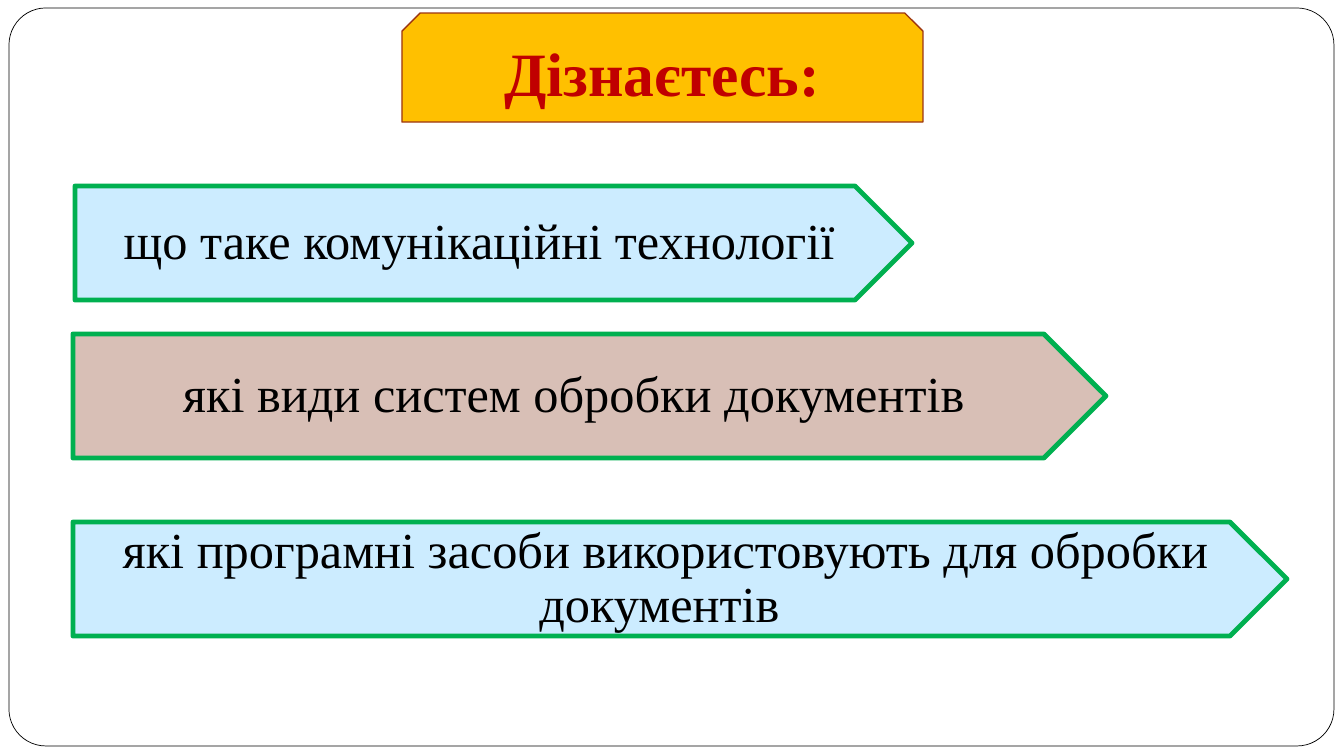
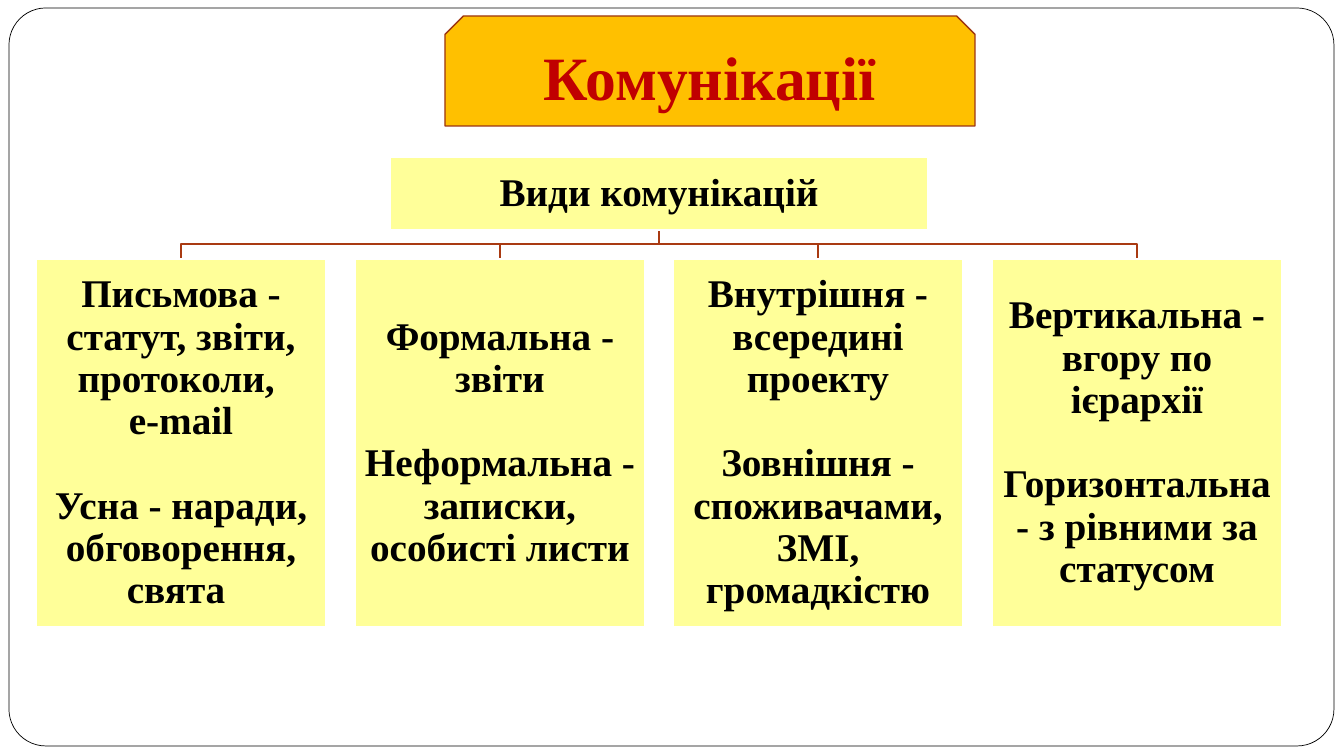
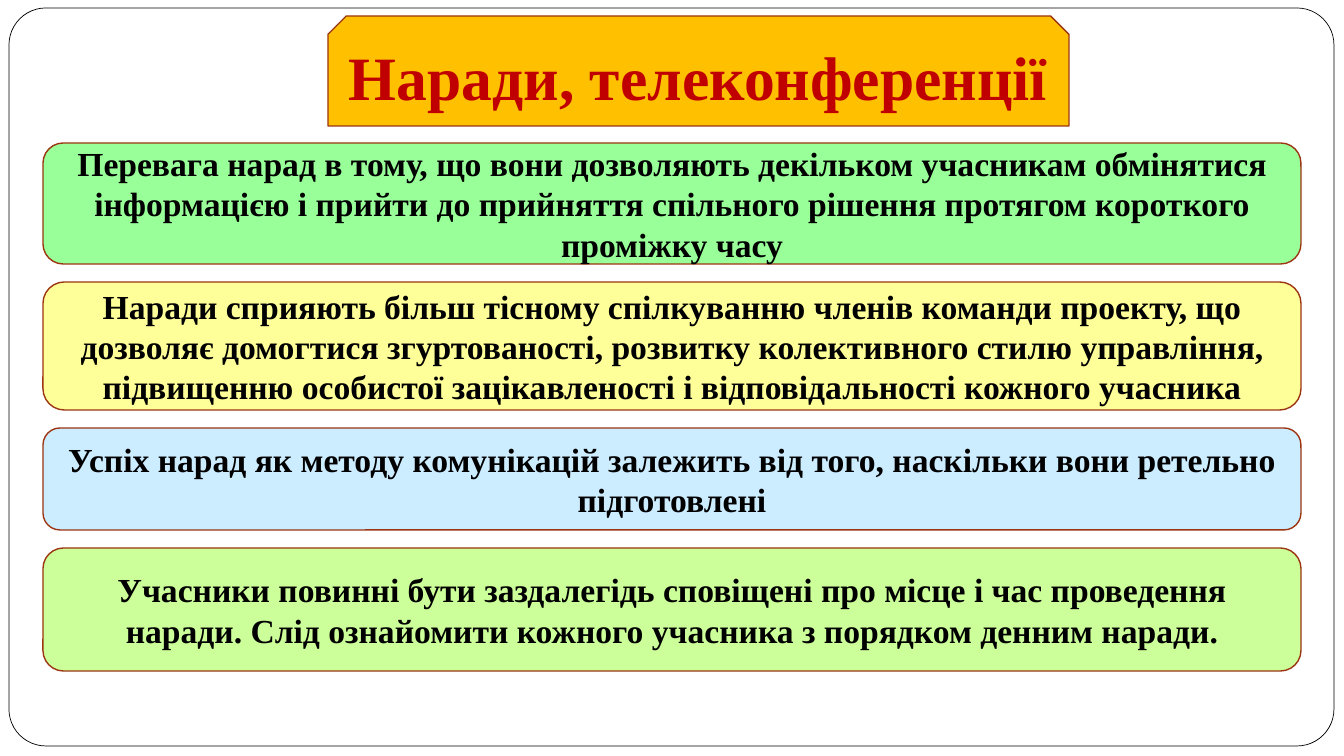
import pptx
import pptx.dml.color
import pptx.enum.shapes
import pptx.enum.text
import pptx.util

SHAPE = pptx.enum.shapes.MSO_SHAPE
PX = 12192000 / 1344
FONT = "Times New Roman"
BLACK, WHITE, RUST, TREE_LINE = "000000", "FFFFFF", "9C3511", "A93A12"
GOLD, RED, GREEN = "FFC000", "C00000", "00B050"
SKY, CLAY, YELLOW, MINT, LIME = "CCECFF", "D8BFB6", "FFFF99", "99FF99", "CCFF99"


def color(hex_value):
    return pptx.dml.color.RGBColor.from_string(hex_value)


def add_box(slide, kind, box, fill, line, line_width, text=(), size=24,
            bold=True, ink=BLACK, spacing=1.0, gap_before=None, inset=None):
    """Add a filled shape with centred text; gap_before is the paragraph that gets one line of space."""
    shape = slide.shapes.add_shape(kind, *[round(length * PX) for length in box])
    shape.shadow.inherit = False
    shape.fill.solid()
    shape.fill.fore_color.rgb = color(fill)
    shape.line.color.rgb = color(line)
    shape.line.width = pptx.util.Pt(line_width)
    frame = shape.text_frame
    frame.word_wrap = True
    frame.vertical_anchor = pptx.enum.text.MSO_ANCHOR.MIDDLE
    if inset is not None:
        frame.margin_left = frame.margin_right = round(inset * PX)
        frame.margin_top = frame.margin_bottom = round(inset * PX)
    for index, words in enumerate(text):
        paragraph = frame.paragraphs[0] if index == 0 else frame.add_paragraph()
        paragraph.text = words
        paragraph.alignment = pptx.enum.text.PP_ALIGN.CENTER
        paragraph.line_spacing = spacing
        if index == gap_before:
            paragraph.space_before = pptx.util.Pt(30)
        paragraph.font.name = FONT
        paragraph.font.size = pptx.util.Pt(size)
        paragraph.font.bold = bold
        paragraph.font.color.rgb = color(ink)
    return shape


deck = pptx.Presentation()
deck.slide_width = round(1344 * PX)
deck.slide_height = round(756 * PX)
blank = deck.slide_layouts[6]
for placeholder in list(blank.placeholders):
    blank.shapes.element.remove(placeholder.element)

# Slides and their title plates
titles = [
    ("Дізнаєтесь:", (402, 13, 521, 109)),
    ("Комунікації", (445, 16, 530, 110)),
    ("Наради, телеконференції", (328, 16, 741, 110)),
]
slides = []
for title, plate in titles:
    slide = deck.slides.add_slide(blank)
    add_box(slide, SHAPE.SNIP_2_SAME_RECTANGLE, plate, GOLD, RUST, 1,
            [title], size=44, ink=RED)
    slides.append(slide)
goals, kinds, meetings = slides

# The rounded page frame belongs to the layout
page_frame = add_box(goals, SHAPE.ROUNDED_RECTANGLE, (9, 8, 1325, 738), WHITE, BLACK, 0.5)
page_frame.adjustments[0] = 0.05
blank.shapes.element.append(page_frame.element)

# Slide 1: learning goals
for goal, box, fill in [
    ("що таке комунікаційні технології", (75, 186, 837, 114), SKY),
    ("які види систем обробки документів", (73, 334, 1033, 124), CLAY),
    ("які програмні засоби використовують для обробки документів ",
     (73, 522, 1214, 114), SKY),
]:
    add_box(goals, SHAPE.PENTAGON, box, fill, GREEN, 3.5, [goal],
            size=36, bold=False, spacing=0.9)

# Slide 2: tree of communication kinds, the elbow lines behind the boxes
tree_style = dict(fill=YELLOW, line=WHITE, line_width=1, size=28, spacing=0.9, inset=2)
branch_texts = [
    ["Письмова - статут, звіти, протоколи, ", "e-mail",
     "Усна - наради, обговорення, свята "],
    ["Формальна - звіти", "Неформальна - записки, особисті листи"],
    ["Внутрішня - всередині проекту", "Зовнішня - споживачами, ЗМІ, громадкістю"],
    ["Вертикальна - вгору по ієрархії", "Горизонтальна - з рівними за статусом"],
]
root_left, root_top, root_width, root_height = root_box = (390, 157, 538, 73)
root_x, root_bottom = root_left + root_width // 2, root_top + root_height
branch_top, branch_width = 259, 290
bus_y = (root_bottom + branch_top) // 2
branch_lefts = [36 + (637 * column + 1) // 2 for column in range(len(branch_texts))]
for left in branch_lefts:
    branch_x = left + branch_width // 2
    builder = kinds.shapes.build_freeform(root_x, root_bottom, scale=PX)
    builder.add_line_segments(
        [(root_x, bus_y), (branch_x, bus_y), (branch_x, branch_top)], close=False)
    elbow = builder.convert_to_shape()
    elbow.shadow.inherit = False
    elbow.fill.background()
    elbow.line.color.rgb = color(TREE_LINE)
    elbow.line.width = pptx.util.Pt(1)
add_box(kinds, SHAPE.RECTANGLE, root_box, text=["Види комунікацій"], **tree_style)
for left, text in zip(branch_lefts, branch_texts):
    add_box(kinds, SHAPE.RECTANGLE, (left, branch_top, branch_width, 368), text=text,
            gap_before=len(text) - 1, **tree_style)

# Slide 3: statements about meetings, stacked with equal gaps
top = 143
for statement, height, fill in [
    ("Перевага нарад в тому, що вони дозволяють декільком учасникам обмінятися "
     "інформацією і прийти до прийняття спільного рішення протягом короткого "
     "проміжку часу", 121, MINT),
    ("Наради сприяють більш тісному спілкуванню членів команди проекту, що "
     "дозволяє домогтися згуртованості, розвитку колективного стилю управління, "
     "підвищенню особистої зацікавленості і відповідальності кожного учасника",
     128, YELLOW),
    ("Успіх нарад як методу комунікацій залежить від того, наскільки вони "
     "ретельно підготовлені", 102, SKY),
    ("Учасники повинні бути заздалегідь сповіщені про місце і час проведення "
     "наради. Слід ознайомити кожного учасника з порядком денним наради.", 123, LIME),
]:
    add_box(meetings, SHAPE.ROUNDED_RECTANGLE, (43, top, 1258, height), fill, RUST, 1,
            [statement])
    top += height + 18

deck.save("out.pptx")
